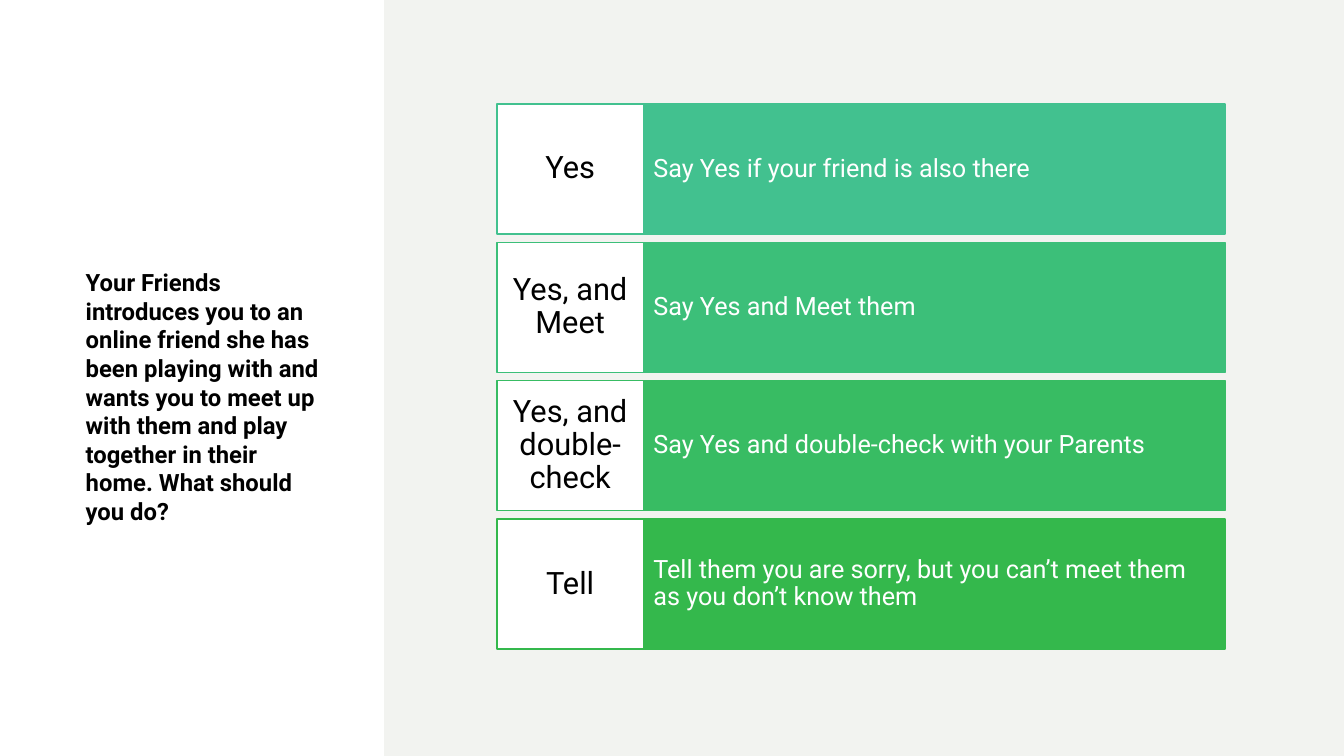
from dataclasses import dataclass

from pptx import Presentation
from pptx.dml.color import RGBColor
from pptx.enum.shapes import MSO_SHAPE
from pptx.enum.text import MSO_ANCHOR, MSO_AUTO_SIZE, PP_ALIGN
from pptx.shapes.autoshape import Shape
from pptx.slide import Slide
from pptx.util import Inches, Pt

FONT = "Roboto"
WHITE, BLACK, GREY = "FFFFFF", "000000", "F2F3F0"
TOP, LAST, HIGH = 1.03, 5.15, 1.29
KEY_LEFT, KEY_WIDE = 4.93, 1.45
BAR_LEFT, BAR_WIDE = 6.37, 5.78


@dataclass
class Choice:
    key: str
    text: str
    tint: str


CHOICES = [
    Choice("Yes", "Say Yes if your friend is also there", "42C18F"),
    Choice("Yes, and Meet", "Say Yes and Meet them", "3CBF79"),
    Choice("Yes, and double-check",
           "Say Yes and double-check with your Parents", "38BC63"),
    Choice("Tell", "Tell them you are sorry, but you can’t meet them "
           "as you don’t know them", "34B84C"),
]


def color(code: str) -> RGBColor:
    return RGBColor.from_string(code)


def add_box(slide: Slide, left: float, top: float, wide: float, high: float,
            fill: str, line: str = "") -> Shape:
    box = slide.shapes.add_shape(MSO_SHAPE.RECTANGLE, Inches(left),
                                 Inches(top), Inches(wide), Inches(high))
    box.shadow.inherit = False
    box.fill.solid()
    box.fill.fore_color.rgb = color(fill)
    if line:
        box.line.color.rgb = color(line)
        box.line.width = Pt(1)
    else:
        box.line.fill.background()
    return box


def write(shape: Shape, text: str, *, size: float, ink: str,
          bold: bool = False, align: PP_ALIGN = PP_ALIGN.LEFT,
          anchor: MSO_ANCHOR = MSO_ANCHOR.MIDDLE, space: float = 0.9,
          side: float = 0.1, above: float = 0.05, below: float = 0.05) -> None:
    frame = shape.text_frame
    frame.word_wrap = True
    frame.auto_size = MSO_AUTO_SIZE.NONE
    frame.vertical_anchor = anchor
    frame.margin_left = frame.margin_right = Inches(side)
    frame.margin_top, frame.margin_bottom = Inches(above), Inches(below)
    para = frame.paragraphs[0]
    para.alignment = align
    para.line_spacing = space
    run = para.add_run()
    run.text = text
    run.font.name = FONT
    run.font.size = Pt(size)
    run.font.bold = bold
    run.font.color.rgb = color(ink)


def add_choice(slide: Slide, item: Choice, top: float) -> None:
    bar = add_box(slide, BAR_LEFT, top, BAR_WIDE, HIGH, item.tint, item.tint)
    write(bar, item.text, size=18, ink=WHITE, side=0.11, above=0.33,
          below=0.33)
    key = add_box(slide, KEY_LEFT, top, KEY_WIDE, HIGH, WHITE, item.tint)
    write(key, item.key, size=22, ink=BLACK, align=PP_ALIGN.CENTER,
          side=0.08, above=0.13, below=0.13)


def main() -> None:
    deck = Presentation()
    deck.slide_width, deck.slide_height = Inches(13.33), Inches(7.5)
    slide = deck.slides.add_slide(deck.slide_layouts[5])
    slide.background.fill.solid()
    slide.background.fill.fore_color.rgb = color(WHITE)

    # Question on the left
    title = slide.shapes.title
    title.left, title.top = Inches(0.75), Inches(2.3)
    title.width, title.height = Inches(2.54), Inches(3.51)
    write(title, "Your Friends introduces you to an online friend she has been "
          "playing with and wants you to meet up with them and play together "
          "in their home. What should you do?", size=17, ink=BLACK, bold=True,
          anchor=MSO_ANCHOR.BOTTOM, space=1.0, below=0.6)

    # Panel and choices on the right
    add_box(slide, 3.81, 0, 9.52, 7.5, GREY)
    step = (LAST - TOP) / (len(CHOICES) - 1)
    for row, item in enumerate(CHOICES):
        add_choice(slide, item, TOP + row * step)

    deck.save("out.pptx")


if __name__ == "__main__":
    main()
